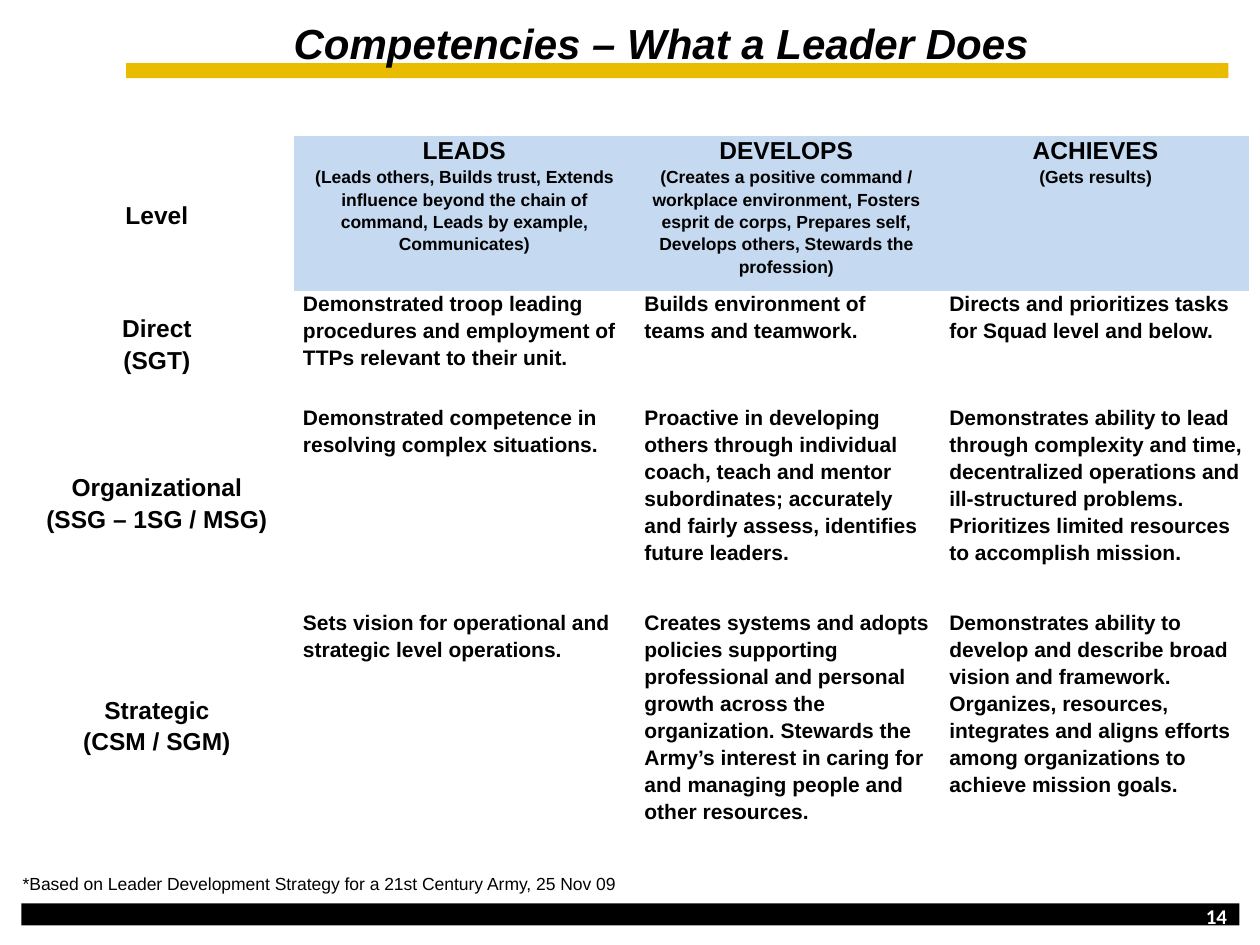
from pptx import Presentation
from pptx import util as u
from pptx.dml.color import RGBColor
from pptx.enum import shapes, text
from pptx.oxml.ns import qn

THEME = {
    "ink": RGBColor(0, 0, 0), "paper": RGBColor(255, 255, 255),
    "gold": RGBColor(0xEA, 0xBC, 0x00), "sky": RGBColor(0xC5, 0xD9, 0xF0),
    "font": "Arial", "number_font": "Calibri",
    "title": 24, "label": 14, "body": 12, "small": 10,
}
NO_GRID_STYLE = "{2D5ABB26-0587-4C30-8999-92F81FD0307C}"
LEFT, CENTER = text.PP_ALIGN.LEFT, text.PP_ALIGN.CENTER

prs = Presentation()
prs.slide_width, prs.slide_height = u.Inches(10), u.Inches(7.5)
slide = prs.slides.add_slide(prs.slide_layouts[5])


def place(left, top, width, height):
    """Turn percentages of the slide into left, top, width and height."""
    across, down = prs.slide_width / 100, prs.slide_height / 100
    return [u.Emu(round(share * side)) for share, side in
            zip((left, top, width, height), (across, down, across, down))]


def write(frame, lines, sizes, align=LEFT, spacings=(1,), margins=(0, 0, 0, 0), **font):
    """Fill a cell or text frame; the last size and spacing serve all later lines."""
    sides = ("margin_left", "margin_top", "margin_right", "margin_bottom")
    for side, inches in zip(sides, margins):
        setattr(frame, side, u.Inches(inches))
    body = getattr(frame, "text_frame", frame)
    body.word_wrap = True
    body.text = "\n".join(lines)
    look = {"name": THEME["font"], "bold": True, "italic": False} | font
    color = look.pop("color", THEME["ink"])
    for i, paragraph in enumerate(body.paragraphs):
        paragraph.alignment = align
        paragraph.line_spacing = spacings[min(i, len(spacings) - 1)]
        paragraph.font.size = u.Pt(sizes[min(i, len(sizes) - 1)])
        paragraph.font.color.rgb = color
        for attribute, value in look.items():
            setattr(paragraph.font, attribute, value)


# Bars behind everything else
bars = [((10, 6.67, 87.5, 1.6), "gold"), ((1.7, 95.6, 96.67, 2.33), "ink")]
for box, color in bars:
    bar = slide.shapes.add_shape(shapes.MSO_SHAPE.RECTANGLE, *place(*box))
    bar.shadow.inherit = False
    bar.fill.solid()
    bar.fill.fore_color.rgb = THEME[color]
    bar.line.fill.background()
    slide.shapes._spTree.insert(2, bar._element)

# Title
title = slide.shapes.title
title.left, title.top, title.width, title.height = place(10.8, 0.4, 81.7, 6.53)
write(title.text_frame, ["Competencies – What a Leader Does"], [THEME["title"]],
      margins=(1.25, 0.11, 0, 0), italic=True)
title.text_frame.vertical_anchor = text.MSO_ANCHOR.TOP
title.text_frame.auto_size = text.MSO_AUTO_SIZE.NONE

# Competency table: each cell is a list of paragraphs
columns = [2, 2.67, 2.44, 2.47]
rows = [1.23, 0.82, 1.71, 1.82]
indents = [0, 0.07, 0.11, 0.09]
competencies = [
    [["Level"],
     ["LEADS", "(Leads others, Builds trust, Extends influence beyond the chain of "
      "command, Leads by example, Communicates)"],
     ["DEVELOPS", "(Creates a positive command / workplace environment, Fosters esprit de "
      "corps, Prepares self, Develops others, Stewards the profession)"],
     ["ACHIEVES", "(Gets results)"]],
    [["Direct", "(SGT)"],
     ["Demonstrated troop leading",
      "procedures and employment of TTPs relevant to their unit."],
     ["Builds environment of", "teams and teamwork."],
     ["Directs and prioritizes tasks", "for Squad level and below."]],
    [["Organizational", "(SSG – 1SG / MSG)"],
     ["Demonstrated competence in resolving complex situations."],
     ["Proactive in developing others through individual coach, teach and mentor "
      "subordinates; accurately and fairly assess, identifies future leaders."],
     ["Demonstrates ability to lead through complexity and time, decentralized "
      "operations and ill-structured problems. Prioritizes limited resources to "
      "accomplish mission."]],
    [["Strategic", "(CSM / SGM)"],
     ["Sets vision for operational and", "strategic level operations."],
     ["Creates systems and adopts",
      "policies supporting professional and personal growth across the organization. "
      "Stewards the Army’s interest in caring for and managing people and other "
      "resources."],
     ["Demonstrates ability to", "develop and describe broad vision and framework.",
      "Organizes, resources, integrates and aligns efforts",
      "among organizations to achieve mission goals."]],
]
table = slide.shapes.add_table(
    len(rows), len(columns), *place(3.35, 14.4, sum(columns) * 10, sum(rows) / 0.075)).table
table.first_row = table.horz_banding = False
table._tbl.tblPr.find(qn("a:tableStyleId")).text = NO_GRID_STYLE
for column, width in zip(table.columns, columns):
    column.width = u.Inches(width)
for row, height in zip(table.rows, rows):
    row.height = u.Inches(height)

for r, level in enumerate(competencies):
    for c, lines in enumerate(level):
        cell = table.cell(r, c)
        cell.fill.background()
        if c == 0:
            write(cell, lines, [THEME["label"]], CENTER, (1.15,), (0, 0, 0.18, 0))
            cell.vertical_anchor = text.MSO_ANCHOR.MIDDLE
        elif r == 0:
            write(cell, lines, [THEME["label"], THEME["small"]], CENTER, (1, 1.15),
                  (0.15, 0.01, 0.12, 0))
            cell.fill.solid()
            cell.fill.fore_color.rgb = THEME["sky"]
        else:
            single = len(lines) == 1
            write(cell, lines, [THEME["body"]], LEFT, (1.15,) if single else (1, 1.15),
                  (indents[c], 0.07 if single else 0.01, 0.05 if c > 1 else 0, 0))

# Footnote and page number
footnote = slide.shapes.add_textbox(*place(1.8, 92.4, 50, 2.4))
write(footnote.text_frame,
      ["*Based on Leader Development Strategy for a 21st Century Army, 25 Nov 09"],
      [THEME["small"]], bold=False)
page_number = slide.shapes.add_textbox(*place(95.2, 95.6, 2.7, 2.53))
write(page_number.text_frame, ["14"], [THEME["body"]], CENTER,
      name=THEME["number_font"], color=THEME["paper"])

prs.save("out.pptx")
